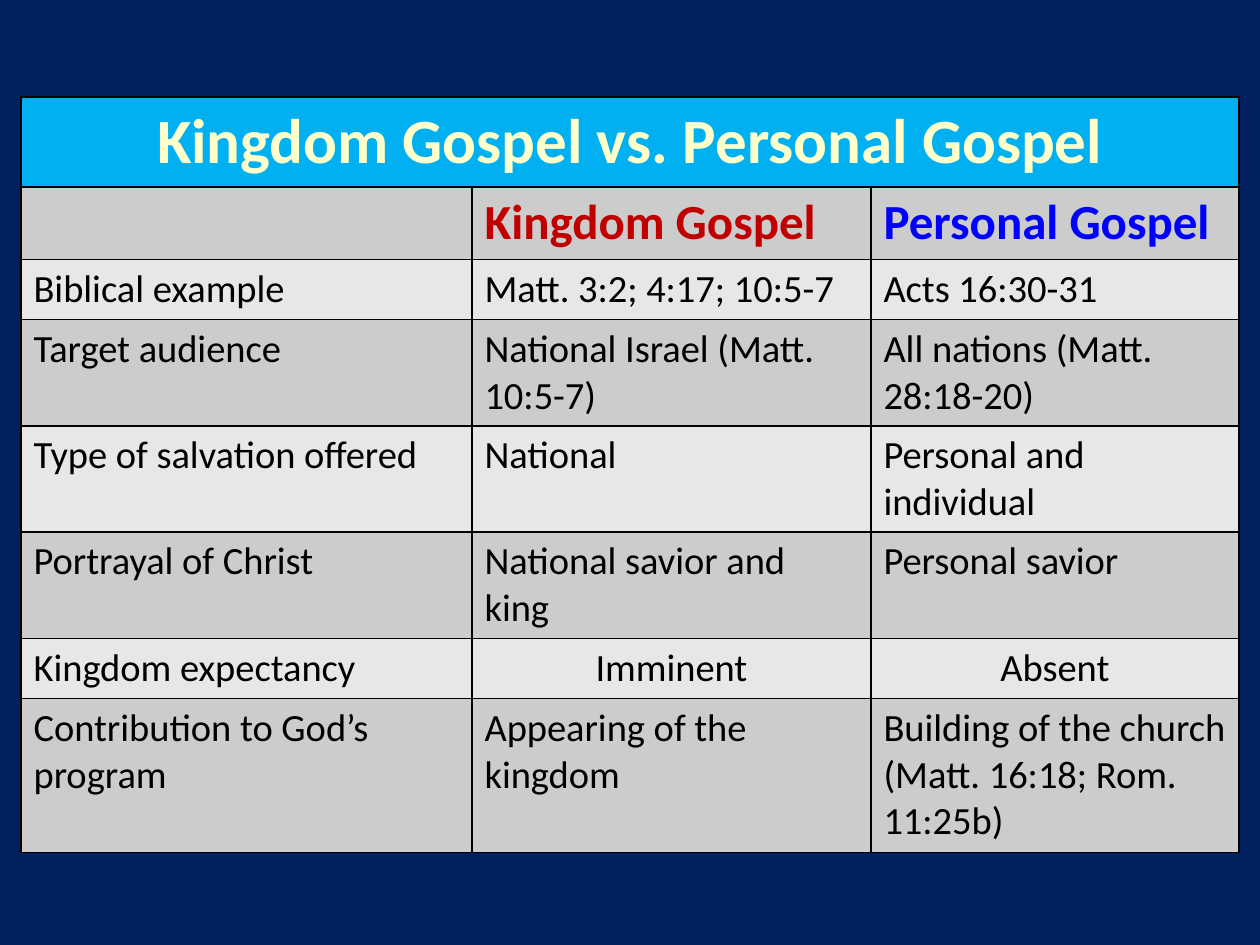
from lxml import etree
from pptx import Presentation
from pptx.dml.color import RGBColor
from pptx.enum.text import PP_ALIGN
from pptx.oxml import parse_xml
from pptx.util import Pt

LEFT, MID = PP_ALIGN.LEFT, PP_ALIGN.CENTER
NAVY = RGBColor(0x00, 0x20, 0x60)
SKY = RGBColor(0x00, 0xB0, 0xF0)
CREAM = RGBColor(0xFF, 0xFF, 0xCC)
RED = RGBColor(0xC0, 0x00, 0x00)
BLUE = RGBColor(0x00, 0x00, 0xFF)
BLACK = RGBColor(0x00, 0x00, 0x00)
DARK = RGBColor(0xCC, 0xCC, 0xCC)
LIGHT = RGBColor(0xE7, 0xE7, 0xE7)
NS = "http://schemas.openxmlformats.org/drawingml/2006/main"


def px(n):
    return round(n * 914400 / 126)


def edge(cell):
    props = cell._tc.get_or_add_tcPr()
    for side in "LRTB":
        props.append(parse_xml(
            f'<a:ln{side} xmlns:a="{NS}" w="{Pt(1)}"><a:solidFill>'
            f'<a:srgbClr val="{BLACK}"/></a:solidFill></a:ln{side}>'))


ROWS = [
    ("Kingdom Gospel vs. Personal Gospel", "", ""),
    ("", "Kingdom Gospel", "Personal Gospel"),
    ("Biblical example", "Matt. 3:2; 4:17; 10:5-7", "Acts 16:30-31"),
    ("Target audience", "National Israel (Matt. 10:5-7)",
     "All nations (Matt. 28:18-20)"),
    ("Type of salvation offered", "National", "Personal and individual"),
    ("Portrayal of Christ", "National savior and king", "Personal savior"),
    ("Kingdom expectancy", "Imminent", "Absent"),
    ("Contribution to God’s program", "Appearing of the kingdom",
     "Building of the church (Matt. 16:18; Rom. 11:25b)"),
]
WIDTHS = [451, 399, 368]
HEIGHTS = [90, 72, 60, 106, 106, 106, 60, 154]
HEADS = [BLACK, RED, BLUE]

deck = Presentation()
deck.slide_width, deck.slide_height = px(1260), px(945)
slide = deck.slides.add_slide(deck.slide_layouts[6])
slide.background.fill.solid()
slide.background.fill.fore_color.rgb = NAVY

table = slide.shapes.add_table(
    len(ROWS), len(WIDTHS), px(21), px(97),
    px(sum(WIDTHS)), px(sum(HEIGHTS))).table
for col, width in zip(table.columns, WIDTHS):
    col.width = px(width)
for row, height in zip(table.rows, HEIGHTS):
    row.height = px(height)
table.cell(0, 0).merge(table.cell(0, 2))

for r, texts in enumerate(ROWS):
    for c, text in enumerate(texts):
        cell = table.cell(r, c)
        edge(cell)
        cell.fill.solid()
        cell.fill.fore_color.rgb = SKY if r == 0 else DARK if r % 2 else LIGHT
        if not text:
            continue
        cell.text = text
        para = cell.text_frame.paragraphs[0]
        para.alignment = MID if r == 0 or (r == 6 and c) else LEFT
        font = para.font
        font.name = "Calibri"
        font.bold = r < 2
        font.size = Pt({0: 36, 1: 28}.get(r, 22))
        font.color.rgb = CREAM if r == 0 else HEADS[c] if r == 1 else BLACK

deck.save("out.pptx")
